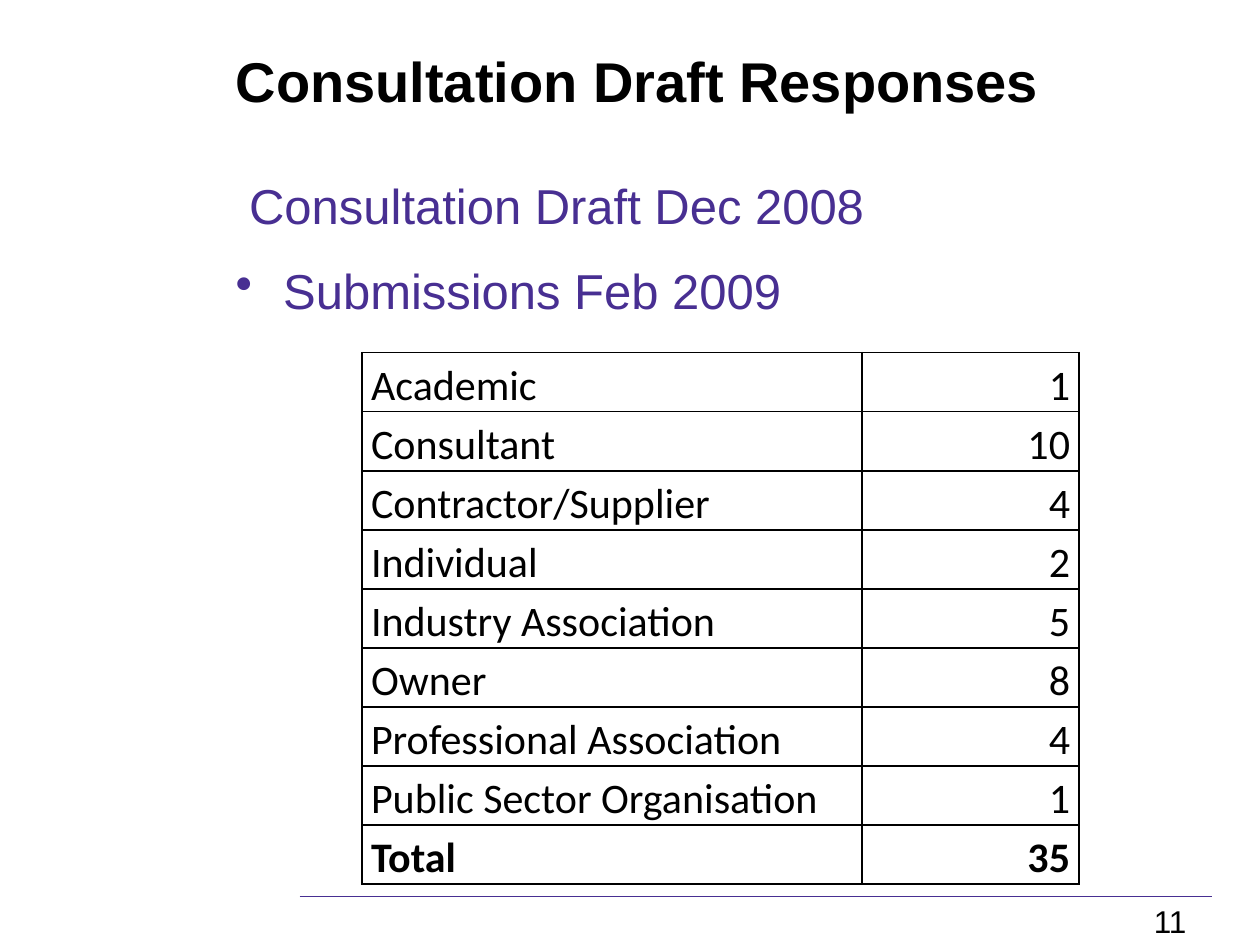
from dataclasses import dataclass
from typing import Any

import lxml.etree
import pptx
import pptx.dml.color
import pptx.enum.shapes
import pptx.enum.text
import pptx.oxml.ns
import pptx.util

Cm = pptx.util.Cm
Pt = pptx.util.Pt
Align = pptx.enum.text.PP_ALIGN
qn = pptx.oxml.ns.qn

COLOURS = {"text": "000000", "accent": "482F92"}
HANGING = Cm(0.96)

TITLE_FORMAT = {"name": "Arial", "size": Pt(32), "bold": True}
BODY_FORMAT = {"name": "Arial", "size": Pt(28)}
NUMBER_FORMAT = {"name": "Arial", "size": Pt(18)}
CELL_FORMAT = {"name": "Calibri", "size": Pt(24)}


@dataclass
class Line:
    text: str
    hanging: bool = False
    bullet: str = ""
    space_before: float = 0


@dataclass
class TextBlock:
    left: float
    top: float
    width: float
    height: float
    lines: list[Line]
    font: dict[str, Any]
    colour: str = "text"
    margin_top: float = 0.2


@dataclass
class Response:
    group: str
    count: int
    bold: bool = False


TEXT_BLOCKS = [
    TextBlock(4.5, 3.33, 20.4, 14.12, [
        Line(" Consultation Draft Dec 2008", hanging=True),
        Line("Submissions Feb 2009", hanging=True, bullet="•", space_before=15),
    ], BODY_FORMAT, "accent"),
    TextBlock(23.01, 18.06, 2.39, 0.99, [Line("11")], NUMBER_FORMAT, margin_top=0.13),
    TextBlock(4.5, 0.74, 20.9, 3.2, [Line("Consultation Draft Responses")], TITLE_FORMAT),
]

RESPONSES = [
    Response("Academic", 1),
    Response("Consultant", 10),
    Response("Contractor/Supplier", 4),
    Response("Individual", 2),
    Response("Industry Association", 5),
    Response("Owner", 8),
    Response("Professional Association", 4),
    Response("Public Sector Organisation", 1),
]


def rgb(name: str) -> pptx.dml.color.RGBColor:
    return pptx.dml.color.RGBColor.from_string(COLOURS[name])


def set_attributes(target: Any, values: dict[str, Any]) -> None:
    for name, value in values.items():
        setattr(target, name, value)


def format_font(paragraph: Any, values: dict[str, Any], colour: str) -> None:
    set_attributes(paragraph.font, values)
    paragraph.font.color.rgb = rgb(colour)


def add_text(slide: Any, block: TextBlock) -> None:
    shape = slide.shapes.add_textbox(
        Cm(block.left), Cm(block.top), Cm(block.width), Cm(block.height))
    frame = shape.text_frame
    set_attributes(frame, {"word_wrap": True, "margin_top": Cm(block.margin_top)})
    for index, line in enumerate(block.lines):
        paragraph = frame.add_paragraph() if index else frame.paragraphs[0]
        paragraph.text = line.text
        if line.space_before:
            paragraph.space_before = Pt(line.space_before)
        properties = paragraph._p.get_or_add_pPr()
        if line.hanging:
            properties.set("marL", str(HANGING))
            properties.set("indent", str(-HANGING))
        if line.bullet:
            lxml.etree.SubElement(properties, qn("a:buChar"), char=line.bullet)
        format_font(paragraph, block.font, block.colour)


def add_footer_rule(slide: Any) -> None:
    rule = slide.shapes.add_connector(
        pptx.enum.shapes.MSO_CONNECTOR.STRAIGHT,
        Cm(6.04), Cm(18.08), Cm(24.43), Cm(18.08))
    rule.line.color.rgb = rgb("accent")
    rule.line.width = Pt(0.75)
    lxml.etree.SubElement(rule._element.spPr, qn("a:effectLst"))


def add_borders(cell: Any) -> None:
    properties = cell._tc.get_or_add_tcPr()
    for side in ("a:lnL", "a:lnR", "a:lnT", "a:lnB"):
        border = lxml.etree.SubElement(properties, qn(side), w=str(Pt(1)))
        fill = lxml.etree.SubElement(border, qn("a:solidFill"))
        lxml.etree.SubElement(fill, qn("a:srgbClr"), val=COLOURS["text"])


def fill_cell(cell: Any, text: str, alignment: Any, bold: bool) -> None:
    set_attributes(cell, {
        "text": text,
        "vertical_anchor": pptx.enum.text.MSO_ANCHOR.BOTTOM,
        "margin_left": Cm(0.18), "margin_right": Cm(0.18),
        "margin_top": 0, "margin_bottom": 0,
    })
    add_borders(cell)
    cell.fill.background()
    paragraph = cell.text_frame.paragraphs[0]
    set_attributes(paragraph, {"alignment": alignment, "line_spacing": 1.15})
    format_font(paragraph, {**CELL_FORMAT, "bold": bold}, "text")


def add_response_table(slide: Any, responses: list[Response]) -> None:
    total = Response("Total", sum(response.count for response in responses), True)
    rows = [*responses, total]
    widths = (Cm(10.08), Cm(4.37))
    row_height = Cm(1.19)
    table = slide.shapes.add_table(
        len(rows), len(widths), Cm(7.3), Cm(7.11),
        sum(widths), row_height * len(rows)).table
    set_attributes(table, {"first_row": False, "horz_banding": False})
    for column, width in zip(table.columns, widths):
        column.width = width
    for index, response in enumerate(rows):
        table.rows[index].height = row_height
        fill_cell(table.cell(index, 0), response.group, Align.LEFT, response.bold)
        fill_cell(table.cell(index, 1), str(response.count), Align.RIGHT, response.bold)


def main() -> None:
    presentation = pptx.Presentation()
    presentation.slide_width = Cm(25.4)
    presentation.slide_height = Cm(19.05)
    slide = presentation.slides.add_slide(presentation.slide_layouts[6])
    add_footer_rule(slide)
    for block in TEXT_BLOCKS:
        add_text(slide, block)
    add_response_table(slide, RESPONSES)
    presentation.save("out.pptx")


if __name__ == "__main__":
    main()
